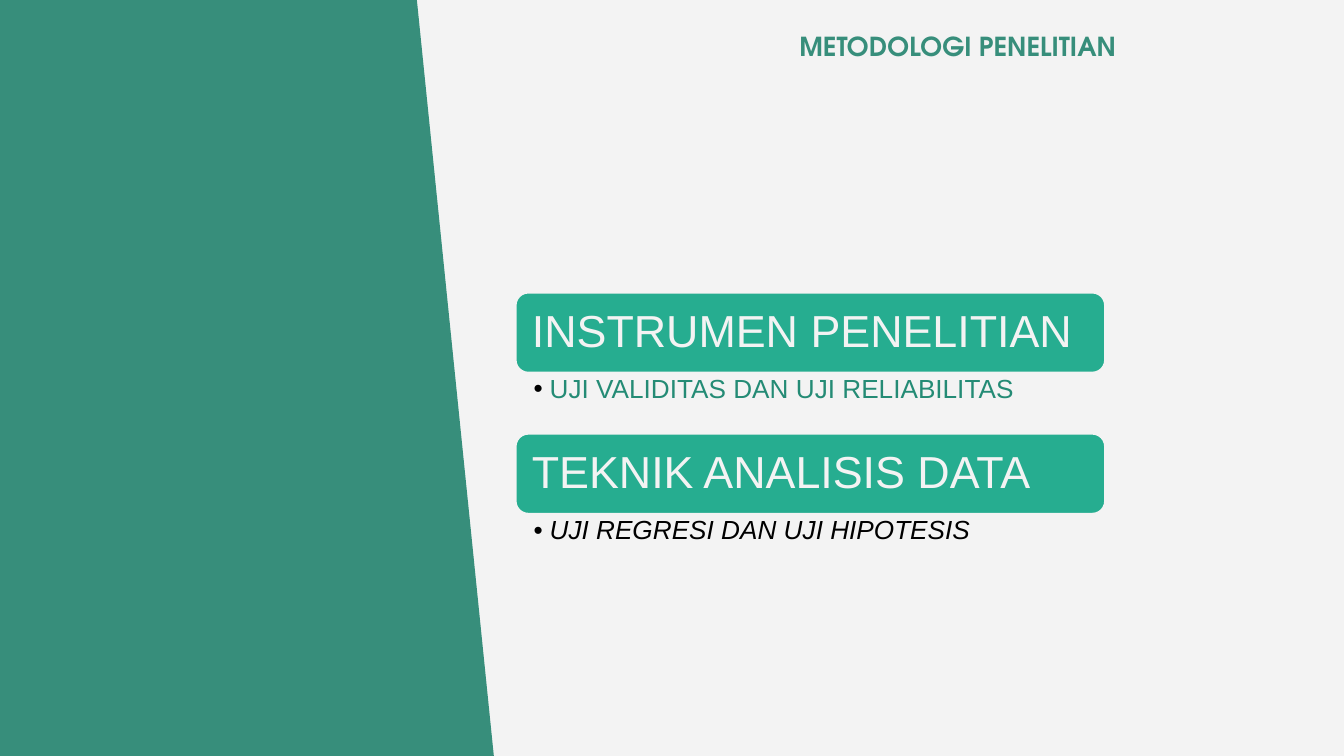
"""Build the research methodology slide with two headed topics."""
import pptx
import pptx.dml.color
import pptx.enum.shapes
import pptx.enum.text
import pptx.oxml.ns
import pptx.util
from lxml import etree

Inches = pptx.util.Inches
RGB = pptx.dml.color.RGBColor.from_string
ALIGN = pptx.enum.text.PP_ALIGN
ANCHOR = pptx.enum.text.MSO_ANCHOR

THEME = {
    "paper": "F3F3F3", "panel": "378E7B", "bar": "26AD90",
    "detail": "248B75", "black": "000000",
    "title_font": "TeX Gyre Adventor", "body_font": "Arial",
    "title_size": 14, "heading_size": 24, "detail_size": 14,
}
TITLE = "METODOLOGI PENELITIAN "
TOPICS = [
    {"heading": "INSTRUMEN PENELITIAN",
     "detail": "UJI VALIDITAS DAN UJI RELIABILITAS", "color": "detail", "italic": False},
    {"heading": "TEKNIK ANALISIS DATA",
     "detail": "UJI REGRESI DAN UJI HIPOTESIS", "color": "black", "italic": True},
]
SLIDE_W = 10
SLIDE_H = SLIDE_W * 9 / 16
PANEL = [(3.1, -0.02), (3.68, 5.68), (-0.04, 5.68), (-0.04, -0.02)]
LEFT, TOP, WIDTH = 3.83, 2.17, 4.4
BAR_H, DETAIL_H, PITCH = 0.61, 0.43, 1.05


def write(sp, text, role, color, margins, align, anchor, spacing=1.0, **styles):
    """Fill a shape with one formatted paragraph and return it."""
    tf = sp.text_frame
    sides = ("margin_left", "margin_top", "margin_right", "margin_bottom")
    frame = {side: Inches(m) for side, m in zip(sides, margins)}
    frame |= {"word_wrap": True, "vertical_anchor": anchor}
    for name, value in frame.items():
        setattr(tf, name, value)
    p = tf.paragraphs[0]
    p.alignment, p.line_spacing = align, spacing
    r = p.add_run()
    r.text = text
    font = {"name": THEME["title_font" if role == "title" else "body_font"],
            "size": pptx.util.Pt(THEME[role + "_size"])} | styles
    for name, value in font.items():
        setattr(r.font, name, value)
    r.font.color.rgb = RGB(THEME[color])
    return p


def add_bullet(p):
    """Give a paragraph a black bullet with a hanging indent."""
    pPr = p._p.get_or_add_pPr()
    pPr.set("marL", str(Inches(0.12)))
    pPr.set("indent", str(-Inches(0.12)))
    qn = pptx.oxml.ns.qn
    color = etree.SubElement(pPr, qn("a:buClr"))
    etree.SubElement(color, qn("a:srgbClr"), val=THEME["black"])
    etree.SubElement(pPr, qn("a:buFont"), typeface=THEME["body_font"])
    etree.SubElement(pPr, qn("a:buChar"), char="•")


def add_panel(s):
    """Draw the slanted side panel."""
    points = [(Inches(x), Inches(y)) for x, y in PANEL]
    builder = s.shapes.build_freeform(*points[0])
    builder.add_line_segments(points[1:], close=True)
    sp = builder.convert_to_shape()
    sp.shadow.inherit = False
    sp.fill.solid()
    sp.fill.fore_color.rgb = RGB(THEME["panel"])
    sp.line.fill.background()


def add_topic(s, topic, top):
    """Draw a heading bar with its bulleted detail below."""
    bar = s.shapes.add_shape(pptx.enum.shapes.MSO_SHAPE.ROUNDED_RECTANGLE,
                             *map(Inches, (LEFT, top, WIDTH, BAR_H)))
    bar.shadow.inherit = False
    bar.fill.solid()
    bar.fill.fore_color.rgb = RGB(THEME["bar"])
    bar.line.color.rgb = RGB(THEME["paper"])
    bar.line.width = pptx.util.Pt(2)
    write(bar, topic["heading"], "heading", "paper", (0.1,) * 4,
          ALIGN.LEFT, ANCHOR.MIDDLE, 0.9)
    box = s.shapes.add_textbox(*map(Inches, (LEFT, top + BAR_H, WIDTH, DETAIL_H)))
    p = write(box, topic["detail"], "detail", topic["color"], (0.14, 0.02, 0.11, 0.02),
              ALIGN.LEFT, ANCHOR.TOP, 0.9, italic=topic["italic"])
    add_bullet(p)


def main():
    """Assemble and save the slide."""
    prs = pptx.Presentation()
    prs.slide_width, prs.slide_height = Inches(SLIDE_W), Inches(SLIDE_H)
    s = prs.slides.add_slide(prs.slide_layouts[6])
    s.background.fill.solid()
    s.background.fill.fore_color.rgb = RGB(THEME["paper"])
    add_panel(s)
    title = s.shapes.add_textbox(*map(Inches, (3.35, 0.2, 5.11, 0.36)))
    write(title, TITLE, "title", "panel", (0.1,) * 4, ALIGN.RIGHT, ANCHOR.BOTTOM, bold=True)
    for i, topic in enumerate(TOPICS):
        add_topic(s, topic, TOP + i * PITCH)
    prs.save("out.pptx")


if __name__ == "__main__":
    main()
